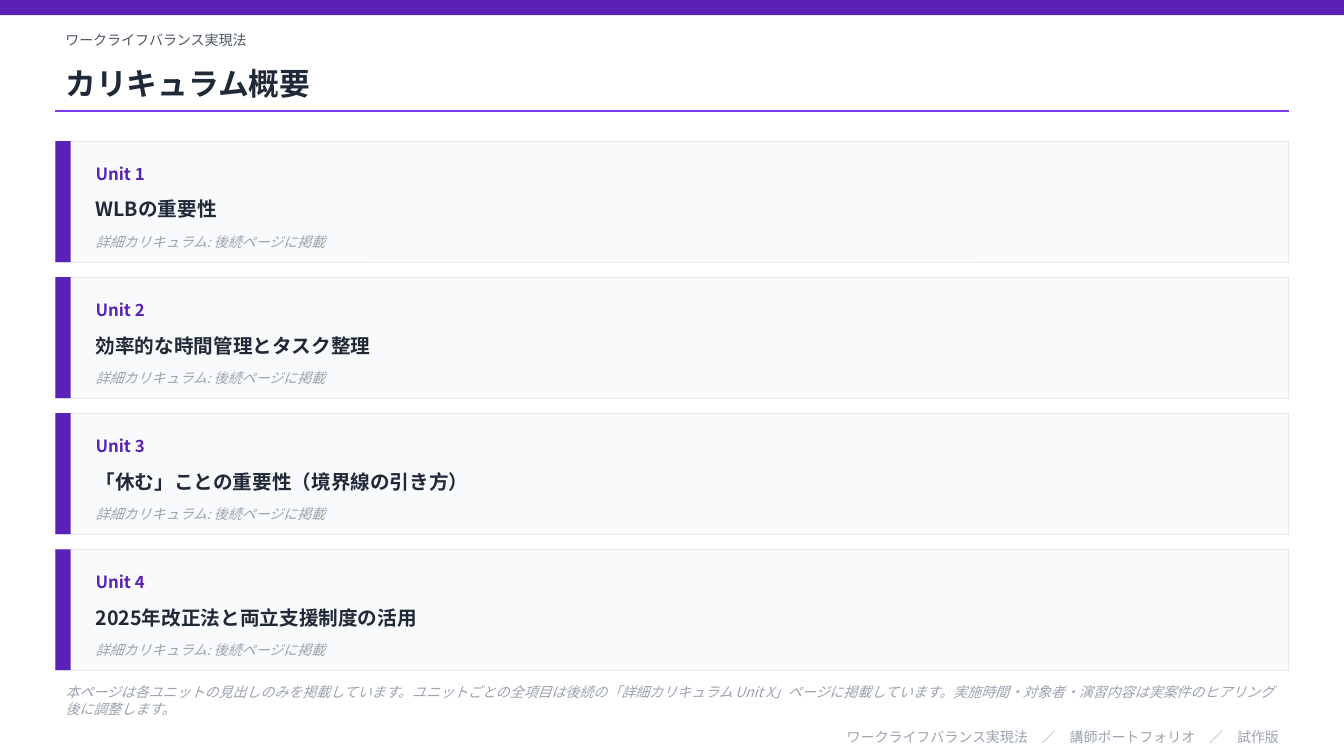
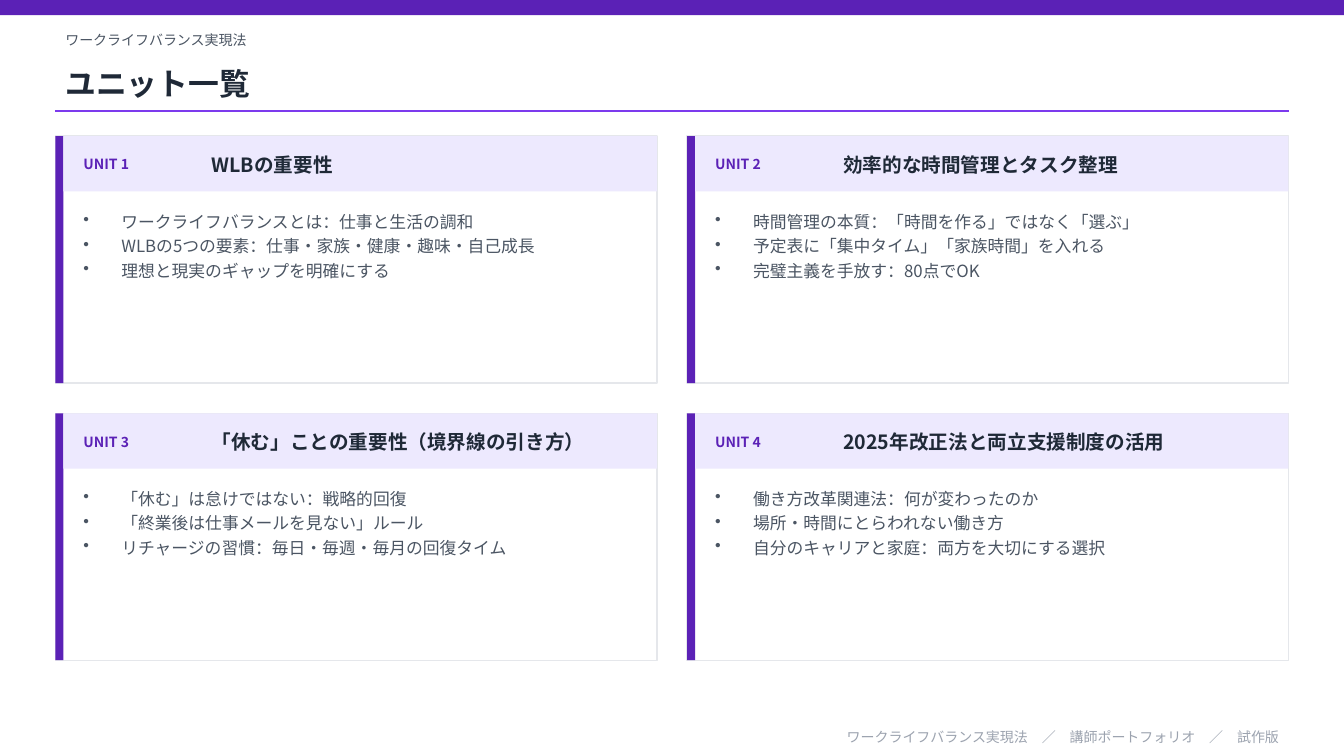
from dataclasses import dataclass
from typing import Optional

from lxml.etree import SubElement
from pptx import Presentation
from pptx.dml.color import RGBColor
from pptx.enum.shapes import MSO_CONNECTOR, MSO_SHAPE
from pptx.enum.text import MSO_ANCHOR, PP_ALIGN
from pptx.oxml.ns import qn
from pptx.slide import Slide
from pptx.util import Pt

PURPLE = RGBColor(0x5B, 0x21, 0xB6)
VIOLET = RGBColor(0x7C, 0x3A, 0xED)
LAVENDER = RGBColor(0xED, 0xE9, 0xFE)
INK = RGBColor(0x1F, 0x29, 0x37)
SLATE = RGBColor(0x4B, 0x55, 0x63)
MUTED = RGBColor(0x9C, 0xA3, 0xAF)
BORDER = RGBColor(0xE5, 0xE7, 0xEB)
PALE = RGBColor(0xF9, 0xFA, 0xFB)
WHITE = RGBColor(0xFF, 0xFF, 0xFF)

FONT = "Noto Sans CJK JP"
PAGE_WIDTH, PAGE_HEIGHT = 960, 540
MARGIN = 39.6
CONTENT_WIDTH = PAGE_WIDTH - 2 * MARGIN
BULLET_INDENT = 27

COURSE = "ワークライフバランス実現法"
FOOTER = f"{COURSE}　／　講師ポートフォリオ　／　試作版"
DETAIL = "詳細カリキュラム: 後続ページに掲載"
NOTE = (
    "本ページは各ユニットの見出しのみを掲載しています。"
    "ユニットごとの全項目は後続の「詳細カリキュラム Unit X」ページに掲載しています。"
    "実施時間・対象者・演習内容は実案件のヒアリング後に調整します。"
)


@dataclass(frozen=True)
class Area:
    left: float
    top: float
    width: float
    height: float

    def inner(self, left: float, top: float, width: float, height: float) -> "Area":
        return Area(self.left + left, self.top + top, width, height)


@dataclass(frozen=True)
class Style:
    size: float
    color: RGBColor
    bold: bool = False
    italic: bool = False


@dataclass(frozen=True)
class Unit:
    title: str
    topics: tuple[str, ...]


COURSE_STYLE = Style(10, SLATE)
TITLE_STYLE = Style(22, INK, bold=True)
UNIT_STYLE = Style(12, PURPLE, bold=True)
TAG_STYLE = Style(10, PURPLE, bold=True)
HEADING_STYLE = Style(14, INK, bold=True)
TOPIC_STYLE = Style(12, SLATE)
NOTE_STYLE = Style(10, MUTED, italic=True)
FOOTER_STYLE = Style(10, MUTED)

UNITS = (
    Unit("WLBの重要性", (
        "ワークライフバランスとは：仕事と生活の調和",
        "WLBの5つの要素：仕事・家族・健康・趣味・自己成長",
        "理想と現実のギャップを明確にする",
    )),
    Unit("効率的な時間管理とタスク整理", (
        "時間管理の本質：「時間を作る」ではなく「選ぶ」",
        "予定表に「集中タイム」「家族時間」を入れる",
        "完璧主義を手放す：80点でOK",
    )),
    Unit("「休む」ことの重要性（境界線の引き方）", (
        "「休む」は怠けではない：戦略的回復",
        "「終業後は仕事メールを見ない」ルール",
        "リチャージの習慣：毎日・毎週・毎月の回復タイム",
    )),
    Unit("2025年改正法と両立支援制度の活用", (
        "働き方改革関連法：何が変わったのか",
        "場所・時間にとらわれない働き方",
        "自分のキャリアと家庭：両方を大切にする選択",
    )),
)


def add_block(page: Slide, area: Area, fill: RGBColor,
              border_width: Optional[float] = None) -> None:
    block = page.shapes.add_shape(
        MSO_SHAPE.RECTANGLE,
        Pt(area.left), Pt(area.top), Pt(area.width), Pt(area.height),
    )
    block.shadow.inherit = False
    block.fill.solid()
    block.fill.fore_color.rgb = fill
    if border_width is None:
        block.line.fill.background()
    else:
        block.line.color.rgb = BORDER
        block.line.width = Pt(border_width)


def add_text(page: Slide, area: Area, lines: tuple[str, ...], style: Style,
             align: PP_ALIGN = PP_ALIGN.LEFT, bulleted: bool = False) -> None:
    box = page.shapes.add_textbox(
        Pt(area.left), Pt(area.top), Pt(area.width), Pt(area.height)
    )
    frame = box.text_frame
    frame.word_wrap = True
    frame.vertical_anchor = MSO_ANCHOR.TOP if bulleted else MSO_ANCHOR.MIDDLE
    for index, line in enumerate(lines):
        para = frame.add_paragraph() if index else frame.paragraphs[0]
        para.alignment = align
        if bulleted:
            para.space_after = Pt(3)
            properties = para._p.get_or_add_pPr()
            properties.set("marL", str(Pt(BULLET_INDENT)))
            properties.set("indent", str(-Pt(BULLET_INDENT)))
            SubElement(properties, qn("a:buChar")).set("char", "•")
        span = para.add_run()
        span.text = line
        font = span.font
        font.name = FONT
        font.size = Pt(style.size)
        font.bold = style.bold
        font.italic = style.italic
        font.color.rgb = style.color
        SubElement(span._r.get_or_add_rPr(), qn("a:ea")).set("typeface", FONT)


def add_rule(page: Slide, top: float) -> None:
    rule = page.shapes.add_connector(
        MSO_CONNECTOR.STRAIGHT,
        Pt(MARGIN), Pt(top), Pt(MARGIN + CONTENT_WIDTH), Pt(top),
    )
    rule.line.color.rgb = VIOLET
    rule.line.width = Pt(1)
    SubElement(rule._element.spPr, qn("a:effectLst"))


def content_row(top: float, height: float) -> Area:
    return Area(MARGIN, top, CONTENT_WIDTH, height)


def add_page(deck: Presentation, title: str) -> Slide:
    page = deck.slides.add_slide(deck.slide_layouts[6])
    page.background.fill.solid()
    page.background.fill.fore_color.rgb = WHITE
    add_block(page, Area(0, 0, PAGE_WIDTH, 10.8), PURPLE)
    add_text(page, content_row(18, 21.6), (COURSE,), COURSE_STYLE)
    add_text(page, content_row(39.6, 39.6), (title,), TITLE_STYLE)
    add_rule(page, 79.2)
    add_text(page, content_row(518.4, 15.84), (FOOTER,), FOOTER_STYLE, PP_ALIGN.RIGHT)
    return page


def add_overview_card(page: Slide, area: Area, number: int, unit: Unit) -> None:
    text_width = area.width - 36
    add_block(page, area, PALE, 0.5)
    add_block(page, area.inner(0, 0, 10.8, area.height), PURPLE)
    add_text(page, area.inner(21.6, 8.64, 108, 28.8), (f"Unit {number}",), UNIT_STYLE)
    add_text(page, area.inner(21.6, 32.4, text_width, 32.4), (unit.title,), HEADING_STYLE)
    add_text(page, area.inner(21.6, 61.2, text_width, 21.6), (DETAIL,), NOTE_STYLE)


def add_unit_card(page: Slide, area: Area, number: int, unit: Unit) -> None:
    rail = 5.76
    add_block(page, area, WHITE, 1)
    add_block(page, area.inner(0, 0, rail, area.height), PURPLE)
    add_block(page, area.inner(rail, 0, area.width - rail, 39.6), LAVENDER)
    add_text(page, area.inner(12.96, 5.76, 86.4, 28.8), (f"UNIT {number}",), TAG_STYLE)
    add_text(page, area.inner(104.4, 5.76, 314.4, 28.8), (unit.title,), HEADING_STYLE)
    add_text(page, area.inner(12.96, 50.4, area.width - 25.92, 115.2),
             unit.topics, TOPIC_STYLE, bulleted=True)


def build_overview(deck: Presentation) -> None:
    page = add_page(deck, "カリキュラム概要")
    height, gap = 86.4, 10.8
    for index, unit in enumerate(UNITS):
        area = content_row(100.8 + index * (height + gap), height)
        add_overview_card(page, area, index + 1, unit)
    add_text(page, content_row(486, 28.8), (NOTE,), NOTE_STYLE)


def build_unit_list(deck: Presentation) -> None:
    page = add_page(deck, "ユニット一覧")
    gap, height = 21.6, 176.4
    width = (CONTENT_WIDTH - gap) / 2
    for index, unit in enumerate(UNITS):
        row, column = divmod(index, 2)
        area = Area(MARGIN + column * (width + gap),
                    97.2 + row * (height + gap), width, height)
        add_unit_card(page, area, index + 1, unit)


def main() -> None:
    deck = Presentation()
    deck.slide_width = Pt(PAGE_WIDTH)
    deck.slide_height = Pt(PAGE_HEIGHT)
    build_overview(deck)
    build_unit_list(deck)
    deck.save("out.pptx")


if __name__ == "__main__":
    main()
